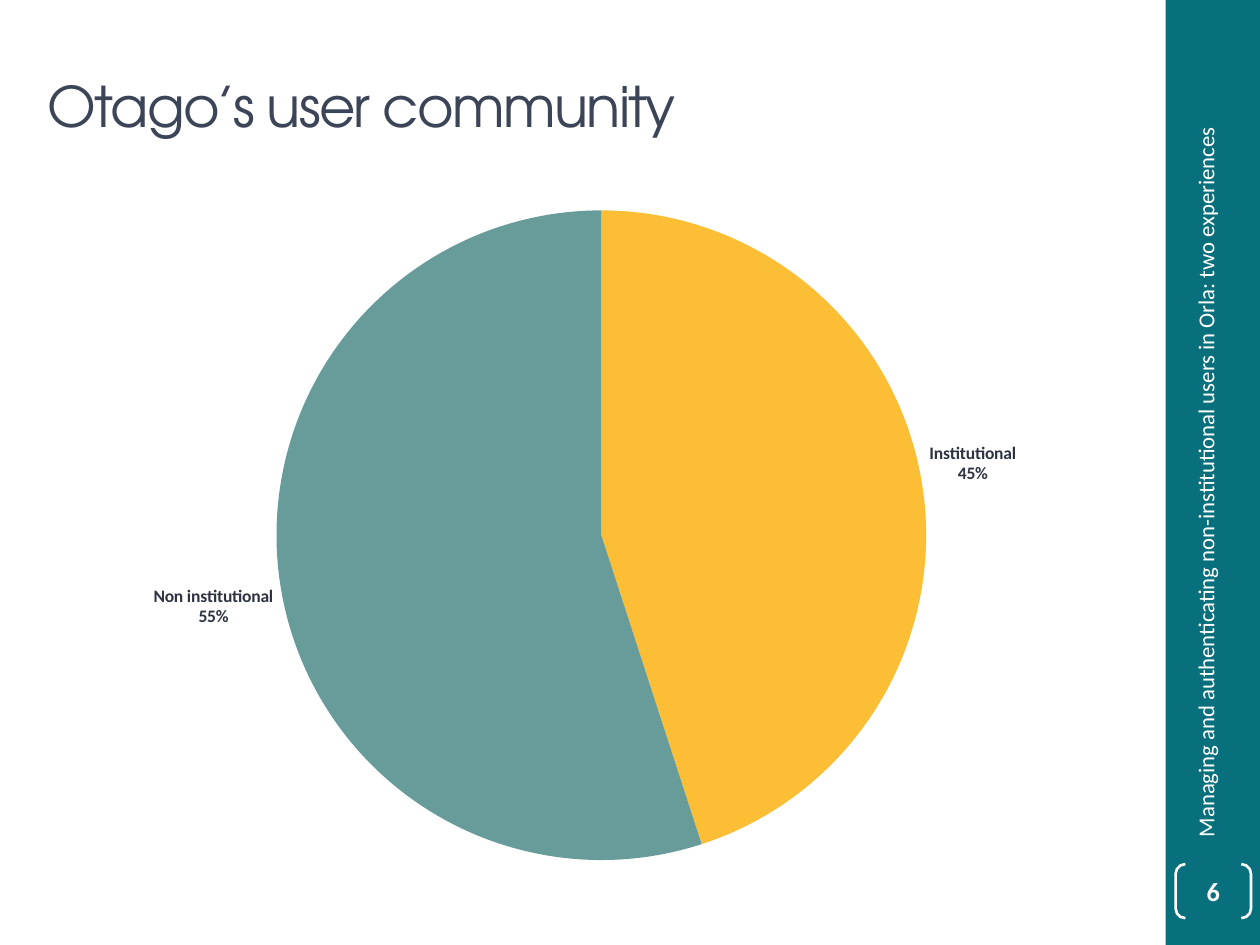
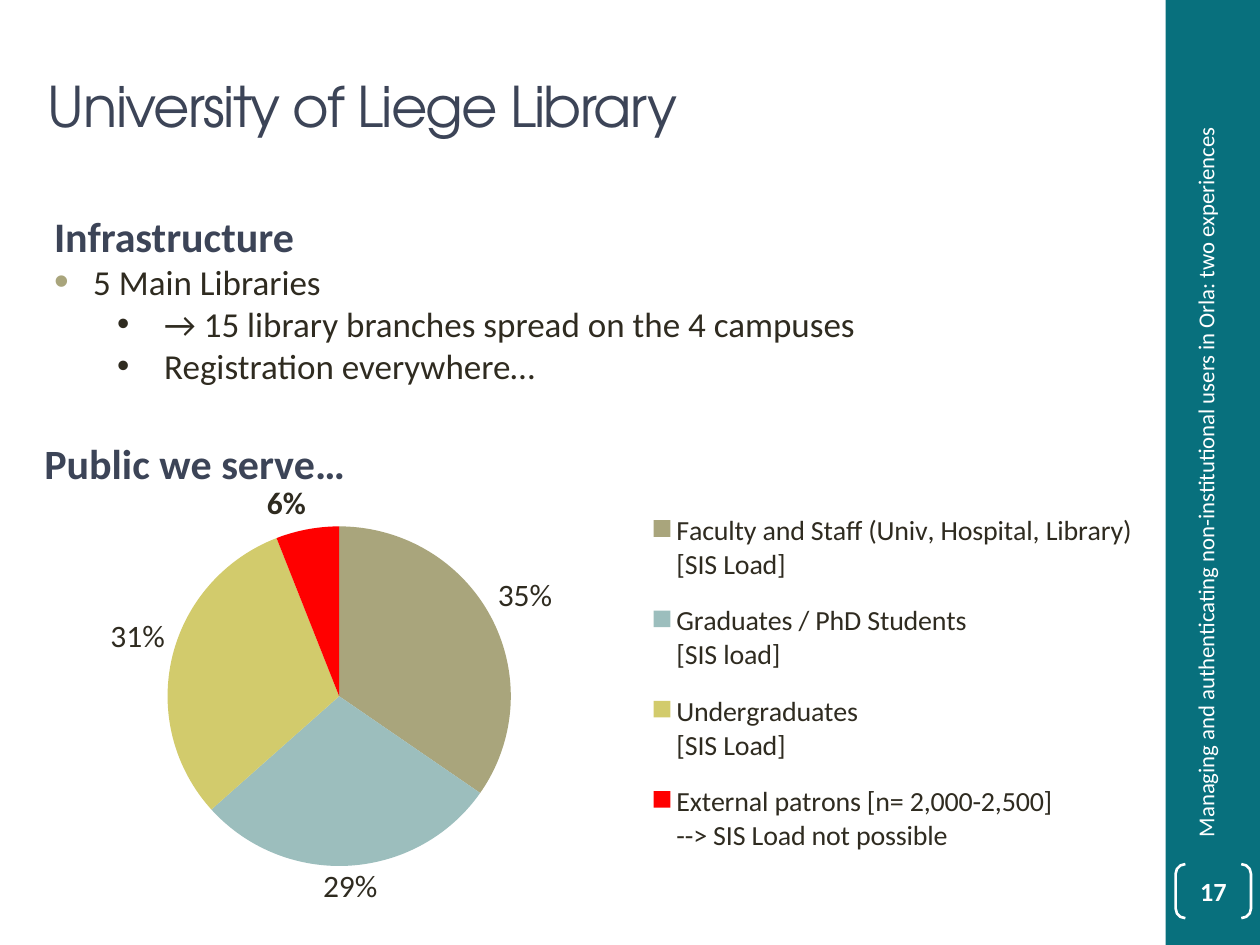
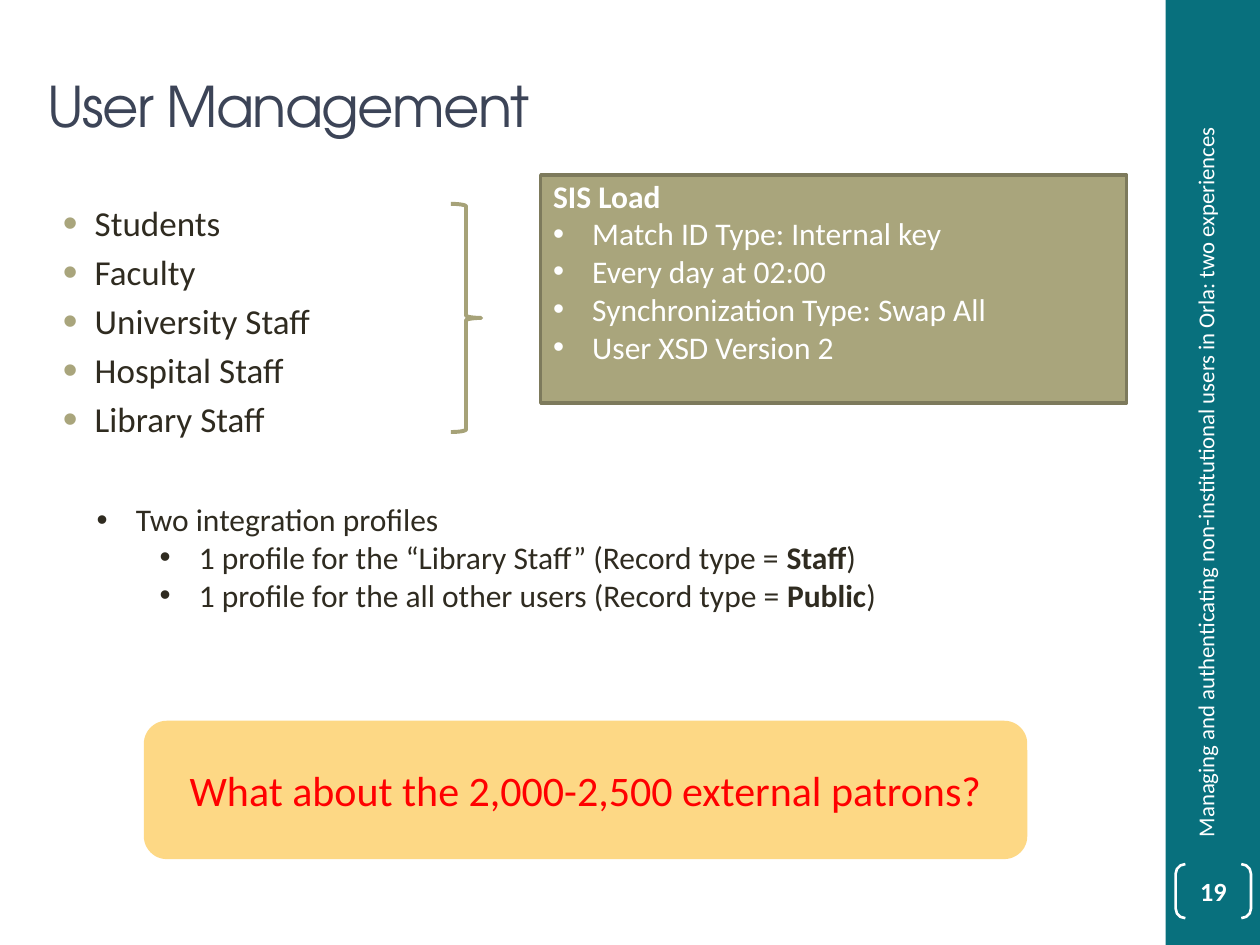
from lxml import etree
from pptx import Presentation
from pptx.chart.data import CategoryChartData
from pptx.dml.color import RGBColor
from pptx.enum.chart import XL_CHART_TYPE as CHART, XL_LABEL_POSITION as LABEL, XL_LEGEND_POSITION as LEGEND
from pptx.enum.shapes import MSO_SHAPE as SHAPE
from pptx.enum.text import MSO_ANCHOR as ANCHOR, MSO_AUTO_SIZE as AUTO, PP_ALIGN as ALIGN
from pptx.oxml.ns import qn
from pptx.util import Cm, Pt

TEAL, NAVY, INK, WHITE = "08707D", "3C4457", "2F2B20", "FFFFFF"
OLIVE, RED = "A9A57C", "FF0000"
BODY, HEAD = "Calibri", "TeX Gyre Adventor"
FOOTER = "Managing and authenticating non-institutional users in Orla: two experiences"


def rgb(value):
    return RGBColor.from_string(value)


def style(p, size, color, bold=False, font=BODY, left=0, hang=0, bullet=None):
    """Format the runs of a paragraph; a bullet colour turns it into a list item."""
    for r in p.runs:
        r.font.size, r.font.bold, r.font.name = Pt(size), bold, font
        r.font.color.rgb = rgb(color)
    if bullet:
        pPr = p._p.get_or_add_pPr()
        pPr.set("marL", str(Cm(left)))
        pPr.set("indent", str(-Cm(hang)))
        clr = etree.SubElement(pPr, qn("a:buClr"))
        etree.SubElement(clr, qn("a:srgbClr")).set("val", bullet)
        etree.SubElement(pPr, qn("a:buSzPct")).set("val", "120000" if bullet == OLIVE else "100000")
        etree.SubElement(pPr, qn("a:buFont")).set("typeface", "Arial")
        etree.SubElement(pPr, qn("a:buChar")).set("char", "•")


prs = Presentation()
prs.slide_width, prs.slide_height = Cm(25.4), Cm(19.05)

# Shared frame: title, side band, page number, running footer
slides = []
for title, number in [("Otago’s user community", 6), ("University of Liege Library", 17),
                      ("User Management", 19)]:
    s = prs.slides.add_slide(prs.slide_layouts[5])
    slides.append(s)

    head = s.shapes.title
    head.left, head.top, head.width, head.height = Cm(0.71), Cm(0.53), Cm(22.2), Cm(3.18)
    tf = head.text_frame
    tf.text = title
    tf.auto_size, tf.vertical_anchor = AUTO.NONE, ANCHOR.MIDDLE
    p = tf.paragraphs[0]
    p.alignment = ALIGN.LEFT
    style(p, 32, NAVY, font=HEAD)
    p.runs[0]._r.get_or_add_rPr().set("spc", "-100")

    band = s.shapes.add_shape(SHAPE.RECTANGLE, Cm(23.5), 0, Cm(1.9), Cm(19.05))
    band.shadow.inherit = False
    band.fill.solid()
    band.fill.fore_color.rgb = rgb(TEAL)
    band.line.fill.background()

    page = s.shapes.add_shape(SHAPE.DOUBLE_BRACKET, Cm(23.7), Cm(17.42), Cm(1.52), Cm(1.09))
    page.shadow.inherit = False
    page.adjustments[0] = 0.18
    page.fill.background()
    page.line.color.rgb, page.line.width = rgb(WHITE), Pt(1.5)
    tf = page.text_frame
    tf.margin_left = tf.margin_right = tf.margin_top = tf.margin_bottom = 0
    tf.vertical_anchor = ANCHOR.MIDDLE
    tf.text = str(number)
    tf.paragraphs[0].alignment = ALIGN.CENTER
    style(tf.paragraphs[0], 15, WHITE, bold=True)

    footer = s.shapes.add_textbox(Cm(16.1), Cm(8.31), Cm(16.61), Cm(1.02))
    footer.rotation = 270
    footer.text_frame.word_wrap = True
    footer.text_frame.text = FOOTER
    style(footer.text_frame.paragraphs[0], 13, WHITE)

community, library, management = slides

# Pie charts: slide, place, font size, plot box, categories, values, colours
pies = [
    (community, (0.69, 3.94, 22.2, 13.84), 10, (0.22, 0.02, 0.59, 0.95),
     ["Institutional", "Non institutional"], [45, 55], ["FBBE34", "689C9A"]),
    (library, (0.51, 8.33, 23.01, 10.03), 18, (0.11, 0.23, 0.33, 0.69),
     ["Faculty and Staff (Univ, Hospital, Library)\n[SIS Load]",
      "Graduates / PhD Students\n[SIS load]",
      "Undergraduates\n[SIS Load]",
      "External patrons [n= 2,000-2,500]\n--> SIS Load not possible"],
     [35, 29, 31, 6], [OLIVE, "9CBEBD", "D2CB6C", RED]),
]
for s, place, size, plot_box, cats, values, colors in pies:
    data = CategoryChartData()
    data.categories = cats
    data.add_series("Public we serve…" if s is library else "Series 1", values)
    chart = s.shapes.add_chart(CHART.PIE, *[Cm(v) for v in place], data).chart
    chart.font.size, chart.font.name = Pt(size), BODY
    chart.font.color.rgb = rgb(INK)
    chart.has_title = chart.has_legend = s is library
    plot = chart.plots[0]
    plot.vary_by_categories = True
    series = plot.series[0]
    for i, color in enumerate(colors):
        fill = series.points[i].format.fill
        fill.solid()
        fill.fore_color.rgb = rgb(color)

    labels = series.data_labels
    labels.show_value, labels.show_percentage = False, True
    labels.show_category_name = s is community
    labels.number_format, labels.number_format_is_linked = "0%", False
    labels.position = LABEL.OUTSIDE_END
    labels.font.size, labels.font.bold = Pt(size), s is community
    labels.font.color.rgb = rgb("2D3341" if s is community else INK)

    space = chart._chartSpace
    layouts = [(space.find(".//" + qn("c:plotArea")), 0, plot_box)]
    if s is community:
        sep = etree.Element(qn("c:separator"))
        sep.text = "\n"
        space.find(".//" + qn("c:dLbls") + "/" + qn("c:showBubbleSize")).addnext(sep)
    else:
        tf = chart.chart_title.text_frame
        tf.text = "Public we serve…"
        style(tf.paragraphs[0], 24, NAVY, bold=True)
        chart.legend.position = LEGEND.RIGHT
        chart.legend.include_in_layout = False
        chart.legend.font.size = Pt(16)
        layouts += [(space.find(".//" + qn("c:title")), 1, (0.01, 0.03)),
                    (space.find(".//" + qn("c:legend")), 1, (0.53, 0.16, 0.46, 0.78))]
        # The external patrons label stands out in bold
        label = series.points[3].data_label
        label.font.bold, label.font.size = True, Pt(size)
        label.font.color.rgb = rgb(INK)
        label.position = LABEL.OUTSIDE_END
        dLbl = space.find(".//" + qn("c:dLbl"))
        dLbl.find(qn("c:showVal")).set("val", "0")
        dLbl.find(qn("c:showPercent")).set("val", "1")

    # Manual places of plot, title and legend inside the chart
    for part, index, box in layouts:
        for old in part.findall(qn("c:layout")):
            part.remove(old)
        layout = etree.Element(qn("c:layout"))
        manual = etree.SubElement(layout, qn("c:manualLayout"))
        if part.tag == qn("c:plotArea"):
            etree.SubElement(manual, qn("c:layoutTarget")).set("val", "inner")
        for mode in ("xMode", "yMode"):
            etree.SubElement(manual, qn("c:" + mode)).set("val", "edge")
        for key, value in zip("xywh", box):
            etree.SubElement(manual, qn("c:" + key)).set("val", str(value))
        part.insert(index, layout)

# Library: infrastructure
tf = library.shapes.add_textbox(Cm(0.84), Cm(4.11), Cm(19.48), Cm(4.62)).text_frame
tf.word_wrap = True
tf.text = "Infrastructure\n5 Main Libraries\n→ 15 library branches spread on the 4 campuses\nRegistration everywhere…"
heading, main, *branches = tf.paragraphs
style(heading, 24, NAVY, bold=True)
style(main, 20, INK, left=0.79, hang=0.79, bullet=OLIVE)
for p in branches:
    p.level = 1
    style(p, 20, INK, left=2.22, hang=0.95, bullet=INK)

# User management: groups and brace
tf = management.shapes.add_textbox(Cm(0.71), Cm(3.94), Cm(8.2), Cm(5.4)).text_frame
tf.word_wrap = True
tf.text = "Students\nFaculty\nUniversity Staff\nHospital Staff\nLibrary Staff"
for p in tf.paragraphs:
    p.space_before = Pt(4)
    style(p, 20, INK, left=0.95, hang=0.64, bullet=OLIVE)

brace = management.shapes.add_shape(SHAPE.RIGHT_BRACE, Cm(9.09), Cm(4.11), Cm(0.61), Cm(4.6))
brace.shadow.inherit = False
brace.fill.background()
brace.line.color.rgb, brace.line.width = rgb("A6A278"), Pt(2.25)

# SIS load box
load = management.shapes.add_shape(SHAPE.RECTANGLE, Cm(10.9), Cm(3.53), Cm(11.81), Cm(4.6))
load.shadow.inherit = False
load.fill.solid()
load.fill.fore_color.rgb = rgb(OLIVE)
load.line.color.rgb, load.line.width = rgb("7D7A5C"), Pt(2)
tf = load.text_frame
tf.vertical_anchor, tf.margin_top = ANCHOR.TOP, Cm(0.03)
tf.text = ("SIS Load\nMatch ID Type: Internal key\nEvery day at 02:00\n"
           "Synchronization Type: Swap All\nUser XSD Version 2")
for i, p in enumerate(tf.paragraphs):
    p.alignment = ALIGN.LEFT
    style(p, 18, WHITE, bold=i == 0, left=0.79, hang=0.79, bullet=WHITE if i else None)

# Integration profiles
tf = management.shapes.add_textbox(Cm(1.7), Cm(9.73), Cm(18.11), Cm(3)).text_frame
tf.word_wrap, tf.vertical_anchor = True, ANCHOR.MIDDLE
tf.text = "Two integration profiles"
style(tf.paragraphs[0], 18, INK, left=0.79, hang=0.79, bullet=INK)
for users, record in [("“Library Staff”", "Staff"), ("all other users", "Public")]:
    p = tf.add_paragraph()
    p.level = 1
    p.text = f"1 profile for the {users} (Record type = "
    for text in (record, ")"):
        p.add_run().text = text
    style(p, 18, INK, left=2.06, hang=0.79, bullet=INK)
    p.runs[1].font.bold = True

# Closing question
question = management.shapes.add_shape(SHAPE.ROUNDED_RECTANGLE, Cm(2.9), Cm(14.53), Cm(17.81), Cm(2.79))
question.shadow.inherit = False
question.fill.solid()
question.fill.fore_color.rgb = rgb("FDD885")
question.line.fill.background()
tf = question.text_frame
tf.vertical_anchor = ANCHOR.MIDDLE
tf.text = "What about the 2,000-2,500 external patrons?"
tf.paragraphs[0].alignment = ALIGN.CENTER
style(tf.paragraphs[0], 24, RED)

prs.save("out.pptx")
